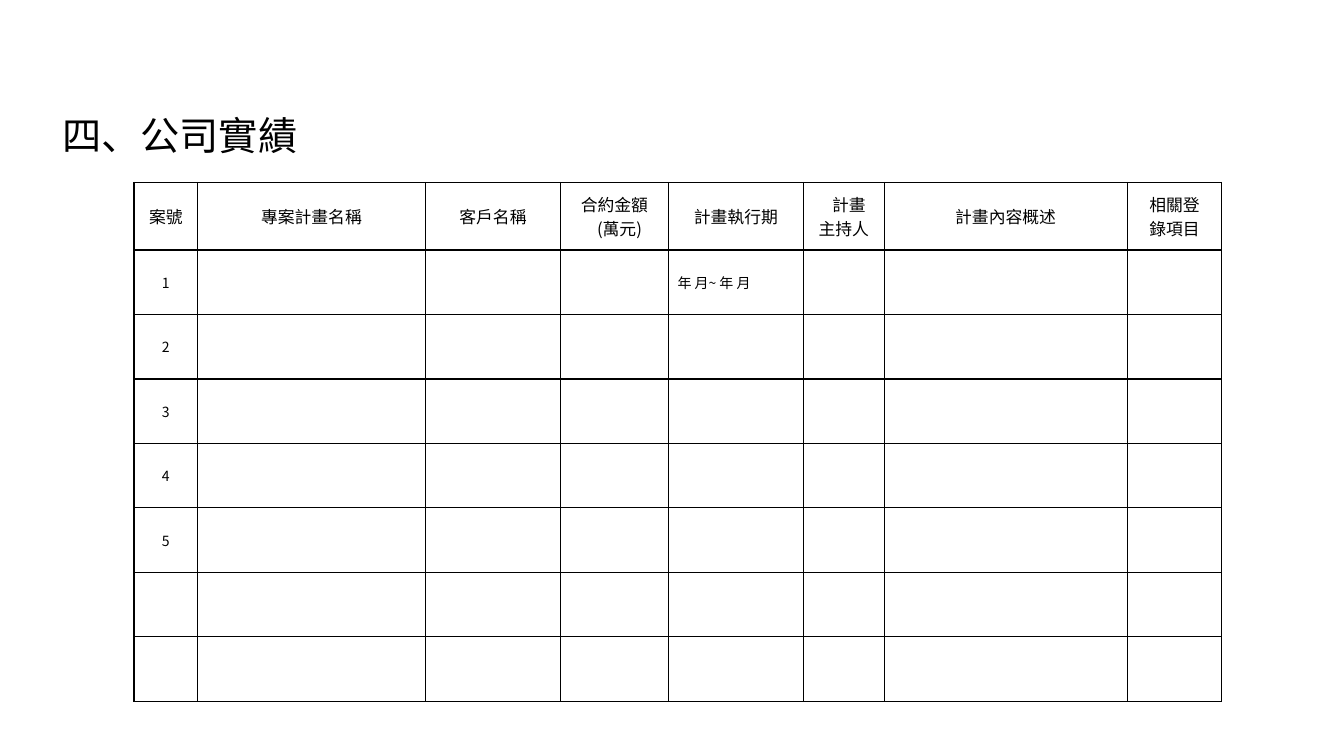
import dataclasses

import pptx
import pptx.enum.text
import pptx.oxml
import pptx.oxml.ns
import pptx.util

WIDE, HIGH = 13.33, 7.5
FONT = "Noto Sans CJK SC"
HUES = {"ink": "000000"}
ALIGN = pptx.enum.text.PP_ALIGN


@dataclasses.dataclass
class Column:
    head: str
    width: float  # share of the slide's width
    inset: int = -1  # index of the head line with a first-line indent


COLS = [
    Column("案號", 0.63 / WIDE),
    Column("專案計畫名稱", 2.26 / WIDE),
    Column("客戶名稱", 1.34 / WIDE),
    Column("合約金額\n(萬元)", 1.07 / WIDE, 1),
    Column("計畫執行期", 1.34 / WIDE),
    Column("計畫\n主持人", 0.8 / WIDE, 0),
    Column("計畫內容概述", 2.41 / WIDE),
    Column("相關登\n錄項目", 0.94 / WIDE),
]
ROWS = [0.67 / HIGH] + [0.64 / HIGH] * 7  # shares of the slide's height
CASES = 5
TERM = 4  # column of the project term


def across(share: float) -> int:
    return pptx.util.Inches(share * WIDE)


def down(share: float) -> int:
    return pptx.util.Inches(share * HIGH)


def style(para, size: float) -> None:
    font = para.font
    font.size = pptx.util.Pt(size)
    font.name = FONT
    font.color.rgb = pptx.dml.color.RGBColor.from_string(HUES["ink"])
    # East Asian glyphs take their own font
    for run in para.runs:
        east = pptx.oxml.ns.qn("a:ea")
        pptx.oxml.xmlchemy.OxmlElement("a:ea")
        props = run.font._element
        props.append(props.makeelement(east, {"typeface": FONT}))


def border(cell) -> None:
    props = cell._tc.get_or_add_tcPr()
    for spot, side in enumerate(("lnL", "lnR", "lnT", "lnB")):
        line = pptx.oxml.parse_xml(
            f'<a:{side} {pptx.oxml.ns.nsdecls("a")} w="12700"><a:solidFill>'
            f'<a:srgbClr val="{HUES["ink"]}"/></a:solidFill></a:{side}>')
        props.insert(spot, line)


def write(cell, text: str, size: float, align=ALIGN.CENTER, inset: int = -1) -> None:
    cell.text = text
    for num, para in enumerate(cell.text_frame.paragraphs):
        para.alignment = align
        style(para, size)
        if num == inset:
            props = para._p.get_or_add_pPr()
            props.set("marL", "0")
            props.set("indent", str(pptx.util.Inches(0.1)))


def title(slide) -> None:
    box = slide.shapes.add_textbox(
        across(0.52 / WIDE), down(1.06 / HIGH), across(2.56 / WIDE), down(0.57 / HIGH))
    frame = box.text_frame
    frame.word_wrap = False
    frame.auto_size = pptx.enum.text.MSO_AUTO_SIZE.SHAPE_TO_FIT_TEXT
    frame.text = "四、公司實績"
    style(frame.paragraphs[0], 28)


def grid(slide) -> None:
    table = slide.shapes.add_table(
        len(ROWS), len(COLS), across(1.33 / WIDE), down(1.81 / HIGH),
        across(sum(col.width for col in COLS)), down(sum(ROWS))).table
    table.first_row = table.horz_banding = False
    for row, share in zip(table.rows, ROWS):
        row.height = down(share)
    for slot, col in zip(table.columns, COLS):
        slot.width = across(col.width)

    # Plain ruled cells
    for cell in table.iter_cells():
        cell.fill.background()
        border(cell)
        cell.vertical_anchor = pptx.enum.text.MSO_ANCHOR.MIDDLE
        cell.margin_left = cell.margin_right = pptx.util.Inches(0.06)
        cell.margin_top = cell.margin_bottom = 0

    # Heads, case numbers and the sample term
    for num, col in enumerate(COLS):
        write(table.cell(0, num), col.head, 12, inset=col.inset)
    for case in range(1, CASES + 1):
        write(table.cell(case, 0), str(case), 10)
    write(table.cell(1, TERM), " 年 月~ 年 月", 10, ALIGN.LEFT)


def main() -> None:
    deck = pptx.Presentation()
    deck.slide_width, deck.slide_height = across(1), down(1)
    slide = deck.slides.add_slide(deck.slide_layouts[6])
    grid(slide)
    title(slide)
    deck.save("out.pptx")


if __name__ == "__main__":
    main()
